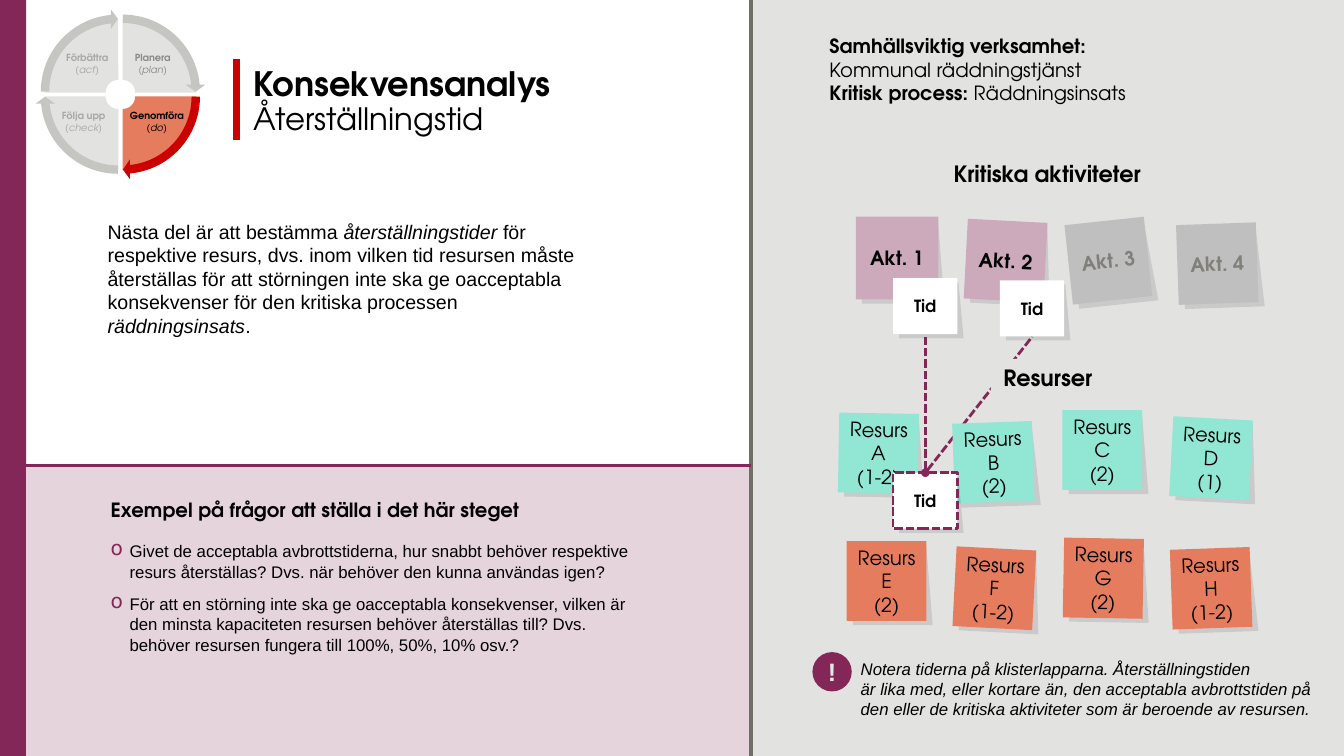
from dataclasses import dataclass
from math import cos, pi, sin

from lxml.etree import SubElement
from pptx import Presentation
from pptx.dml.color import RGBColor
from pptx.enum.dml import MSO_LINE
from pptx.enum.shapes import MSO_CONNECTOR, MSO_SHAPE
from pptx.enum.text import MSO_ANCHOR, MSO_AUTO_SIZE, PP_ALIGN
from pptx.oxml.ns import qn
from pptx.util import Pt


@dataclass(frozen=True)
class Theme:
    plum: str = "822757"
    rose: str = "E6D4DD"
    mauve: str = "CDA9BC"
    panel: str = "E2E2E1"
    rule: str = "6F6E67"
    red: str = "CC0000"
    coral: str = "E67C5E"
    mint: str = "92E6D4"
    grey: str = "BFBFBF"
    grey_text: str = "807F79"
    arrow: str = "C5C5C2"
    faded: str = "A9A8A4"
    plan_text: str = "8C8B85"
    mark: str = "E7E6E6"
    black: str = "000000"
    white: str = "FFFFFF"
    display: str = "TeX Gyre Adventor"
    body: str = "Arial"
    title: int = 24
    subtitle: int = 22
    alert: int = 18
    heading: int = 16
    text: int = 14
    small: int = 12
    tiny: int = 7


T = Theme()


def rgb(code):
    return RGBColor.from_string(code)


def write(shape, paragraphs, size, font=T.display, color=T.black, align=PP_ALIGN.LEFT,
          spacing=None, after=0, wrap=True, insets=(7.2, 3.6), bullet=False):
    frame = shape.text_frame
    frame.word_wrap = wrap
    if not wrap:
        frame.auto_size = MSO_AUTO_SIZE.SHAPE_TO_FIT_TEXT
    frame.margin_left = frame.margin_right = Pt(insets[0])
    frame.margin_top = frame.margin_bottom = Pt(insets[1])
    for number, pieces in enumerate(paragraphs):
        paragraph = frame.add_paragraph() if number else frame.paragraphs[0]
        paragraph.alignment = align
        paragraph.space_after = Pt(after)
        if spacing:
            paragraph.line_spacing = spacing
        if bullet:
            add_bullet(paragraph)
        for words, style, *own_size in pieces:
            points = own_size[0] if own_size else size
            for index, line in enumerate(words.split("\n")):
                if index:
                    paragraph.add_line_break()
                    SubElement(paragraph._p.findall(qn("a:br"))[-1], qn("a:rPr"), sz=str(points * 100))
                if line:
                    run = paragraph.add_run()
                    run.text = line
                    run.font.name = font
                    run.font.size = Pt(points)
                    run.font.bold = "b" in style
                    run.font.italic = "i" in style
                    run.font.color.rgb = rgb(color)


def add_bullet(paragraph):
    properties = paragraph._p.get_or_add_pPr()
    properties.set("marL", str(Pt(13.5)))
    properties.set("indent", str(Pt(-13.5)))
    SubElement(SubElement(properties, qn("a:buClr")), qn("a:srgbClr"), val=T.plum)
    SubElement(properties, qn("a:buSzPct"), val="120000")
    SubElement(properties, qn("a:buChar"), char="o")


def add_text(slide, box, paragraphs, size, **options):
    write(slide.shapes.add_textbox(*map(Pt, box)), paragraphs, size, **options)


def paint(shape, fill):
    shape.shadow.inherit = False
    shape.fill.solid()
    shape.fill.fore_color.rgb = rgb(fill)
    shape.line.fill.background()


def add_block(slide, box, fill, preset=MSO_SHAPE.RECTANGLE):
    block = slide.shapes.add_shape(preset, *map(Pt, box))
    paint(block, fill)
    block.text_frame.vertical_anchor = MSO_ANCHOR.MIDDLE
    return block


def add_outline(slide, points, fill):
    corners = [(Pt(x), Pt(y)) for x, y in points]
    builder = slide.shapes.build_freeform(*corners[0])
    builder.add_line_segments(corners[1:], close=True)
    outline = builder.convert_to_shape()
    paint(outline, fill)
    return outline


def add_line(slide, start, end, color, width, dotted_link=False):
    line = slide.shapes.add_connector(MSO_CONNECTOR.STRAIGHT, *map(Pt, start + end))
    line.line.color.rgb = rgb(color)
    line.line.width = Pt(width)
    if dotted_link:
        line.line.dash_style = MSO_LINE.SQUARE_DOT
        SubElement(line.line._get_or_add_ln(), qn("a:headEnd"), type="oval")
    SubElement(line._element.spPr, qn("a:effectLst"))


def add_note(slide, x, y, width, height, lines, fill, size=T.text, style="", color=T.black,
             turn=0, insets=(7.2, 3.6)):
    left, top = x + 4.4, y + 3
    shade = add_outline(slide, [(left, top), (left + 0.92 * width, top),
                                (left + width, top + height), (left, top + height)], T.black)
    SubElement(shade.fill._xPr.find(".//" + qn("a:srgbClr")), qn("a:alpha"), val="10000")
    note = add_block(slide, (x, y, width, height), fill)
    shade.rotation = note.rotation = turn
    write(note, [[(line, style)] for line in lines], size, color=color,
          align=PP_ALIGN.CENTER, insets=insets)
    return note


def add_wheel(slide):
    outer, inner, steps = 52.6, 9, 16
    for quarter, (x, y, fill) in enumerate([(87.6, 68.9, T.coral), (84.5, 68.9, T.panel),
                                            (84.5, 66.1, T.panel), (87.6, 66.1, T.panel)]):
        angles = [(quarter + step / steps) * pi / 2 for step in range(steps + 1)]
        rim = [(x + outer * cos(a), y + outer * sin(a)) for a in angles]
        hub = [(x + inner * cos(a), y + inner * sin(a)) for a in reversed(angles)]
        add_outline(slide, rim + hub, fill)
    for quarter, (x, y, fill) in enumerate([(28.8, 10.1, T.red), (25.2, 10.1, T.arrow),
                                            (25.2, 6.5, T.arrow), (28.8, 6.5, T.arrow)]):
        arrow = add_block(slide, (x, y, 118, 118), fill, MSO_SHAPE.CIRCULAR_ARROW)
        start = 54 * quarter
        for index, value in enumerate((0.051, 3.275, start + 50.725, start, 0.059)):
            arrow.adjustments[index] = value
    for x, y, width, step, english, color in [
            (39.6, 34.6, 45.4, "Förbättra", "(act)", T.faded),
            (36.7, 75.6, 46, "Följa upp", "(check)", T.faded),
            (85, 75.6, 54, "Genomföra", "(do)", T.black),
            (82.8, 34.6, 52.6, "Planera", "(plan)", T.plan_text)]:
        add_text(slide, (x, y, width, 23.8), [[(step, "b")], [(english, "i")]], T.tiny,
                 color=color, align=PP_ALIGN.CENTER, spacing=0.9, after=1, wrap=False)


def add_notes(slide):
    for x, y, side, turn, number, fill, color in [
            (689.8, 157.7, 57, 3, 2, T.mauve, T.black), (611.3, 154.8, 59, 0, 1, T.mauve, T.black),
            (841, 159.8, 57, -2, 4, T.grey, T.grey_text),
            (763.2, 157.7, 57, -6.1, 3, T.grey, T.grey_text)]:
        add_note(slide, x, y, side, side, [f"Akt. {number}"], fill, style="b", color=color, turn=turn)
    for x, y, turn, letter, hours, fill in [
            (599, 295.2, 1, "A", "1-2", T.mint), (681.1, 301.7, -2, "B", "2", T.mint),
            (758.9, 293, 0, "C", "2", T.mint), (836.6, 298.8, 3, "D", "1", T.mint),
            (604.8, 386.6, 0, "E", "2", T.coral), (681.8, 391.7, 3, "F", "1-2", T.coral),
            (759.6, 384.5, 1, "G", "2", T.coral), (836.6, 391.7, -2, "H", "1-2", T.coral)]:
        add_note(slide, x, y, 57, 57, [f"Resurs {letter}", f"({hours})"], fill, turn=turn,
                 insets=(2.9, 2.9) if letter == "A" else (7.2, 3.6))
    for x, y in [(637.9, 198.7), (714.2, 200.2), (637.9, 337.7)]:
        time_note = add_note(slide, x, y, 46, 40, ["Tid"], T.white, T.small, "b", insets=(0, 0))
    time_note.line.color.rgb = rgb(T.plum)
    time_note.line.width = Pt(2)
    time_note.line.dash_style = MSO_LINE.SQUARE_DOT


def main():
    deck = Presentation()
    deck.slide_width, deck.slide_height = Pt(960), Pt(540)
    slide = deck.slides.add_slide(deck.slide_layouts[6])

    add_block(slide, (0, 0, 18.7, 540), T.plum)
    add_block(slide, (536.4, 0, 423.6, 540), T.panel)
    add_text(slide, (174.2, 44.6, 304.6, 59.8),
             [[("Konsekvensanalys\n", "b", T.title), ("Återställningstid", "", T.subtitle)]],
             T.title, spacing=0.9)
    add_line(slide, (169.2, 42.5), (169.2, 100), T.red, 5)
    add_text(slide, (69.8, 153.4, 362.9, 92.2), [[
        ("Nästa del är att bestämma ", ""), ("återställningstider", "i"),
        (" för \nrespektive resurs, dvs. inom vilken tid resursen måste återställas för att "
         "störningen inte ska ge oacceptabla konsekvenser för den kritiska processen ", ""),
        ("räddningsinsats", "i"), (".", "")]], T.text, font=T.body, after=12)
    add_block(slide, (18.7, 333.4, 518.4, 206.6), T.rose)
    add_text(slide, (72, 352.1, 309.6, 24.5),
             [[("Exempel på frågor att ställa i det här steget", "b")]], T.text, wrap=False)
    add_line(slide, (536.4, 0), (536.4, 540), T.rule, 2.5)
    add_line(slide, (18.7, 332.6), (536.4, 332.6), T.plum, 2.5)
    add_text(slide, (72, 383, 394.6, 89.3), [
        [("Givet de acceptabla avbrottstiderna, hur snabbt behöver respektive resurs återställas? "
          "Dvs. när behöver den kunna användas igen?", "")],
        [("För att en störning inte ska ge oacceptabla konsekvenser, vilken är den minsta "
          "kapaciteten resursen behöver återställas till? Dvs. behöver resursen fungera till "
          "100%, 50%, 10% osv.?", "")]], T.small, font=T.body, after=9, bullet=True)

    add_text(slide, (585.4, 20.9, 285.8, 58.3), [[
        ("Samhällsviktig verksamhet: \n", "b"), ("Kommunal räddningstjänst \n", ""),
        ("Kritisk process: ", "b"), ("Räddningsinsats", "")]], T.text, after=12)
    add_text(slide, (589.7, 110.9, 316.8, 26.6), [[("Kritiska aktiviteter", "b")]], T.heading,
             align=PP_ALIGN.CENTER, after=12)
    add_line(slide, (661, 337.7), (737.3, 240.5), T.plum, 2, dotted_link=True)
    resources = add_block(slide, (707.8, 256.3, 81.4, 26.6), T.panel)
    write(resources, [[("Resurser", "b")]], T.heading, align=PP_ALIGN.CENTER, insets=(5.8, 3.6))
    add_notes(slide)
    add_line(slide, (661, 337.7), (661, 239), T.plum, 2, dotted_link=True)
    add_text(slide, (607.7, 466.6, 339.8, 51.1), [[
        ("Notera tiderna på klisterlapparna. Återställningstiden \när lika med, eller kortare än, "
         "den acceptabla avbrottstiden på den eller de kritiska aktiviteter som är beroende av "
         "resursen.", "i")]], T.small, font=T.body, after=12)
    alert = add_block(slide, (580.3, 465.8, 28.1, 28.1), T.plum, MSO_SHAPE.OVAL)
    write(alert, [[("!", "b")]], T.alert, font=T.body, color=T.mark, align=PP_ALIGN.CENTER,
          insets=(0, 0))
    add_wheel(slide)
    deck.save("out.pptx")


if __name__ == "__main__":
    main()
